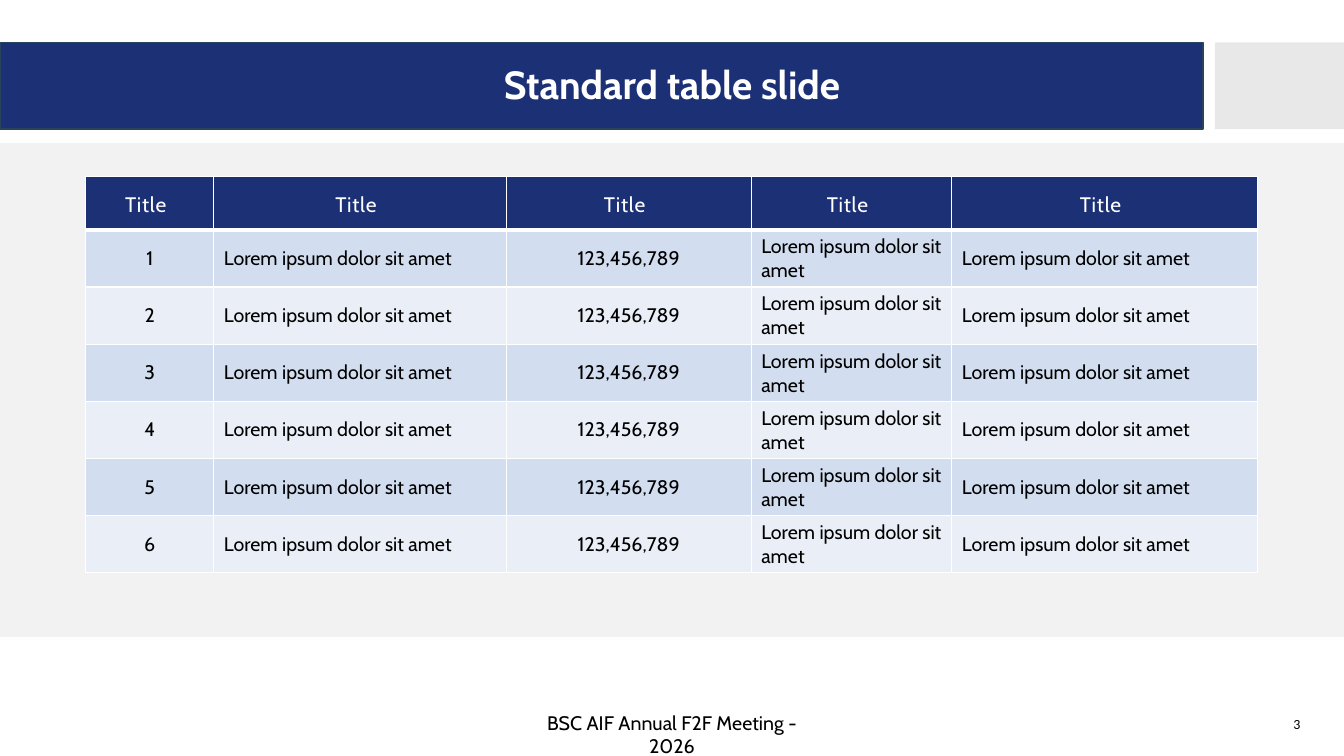
from lxml.etree import SubElement
from pptx import Presentation
from pptx.dml.color import RGBColor
from pptx.enum.shapes import MSO_SHAPE
from pptx.enum.text import MSO_ANCHOR, PP_ALIGN
from pptx.oxml.ns import qn
from pptx.util import Inches, Pt

NAVY = RGBColor(0x1C, 0x30, 0x76)
NAVY_EDGE = RGBColor(0x28, 0x44, 0x5D)
GREY = RGBColor(0xE8, 0xE8, 0xE8)
PANEL = RGBColor(0xF2, 0xF2, 0xF2)
BAND_DARK = RGBColor(0xD2, 0xDE, 0xEF)
BAND_LIGHT = RGBColor(0xEA, 0xEF, 0xF7)
WHITE = RGBColor(0xFF, 0xFF, 0xFF)
BLACK = RGBColor(0, 0, 0)

LEFT, CENTER = PP_ALIGN.LEFT, PP_ALIGN.CENTER


class SlideBuilder:
    """Places elements by percentages of the slide's width and height."""

    title = dict(name="Cabin", size=Pt(28), bold=True, color=WHITE)
    header = dict(name="Cabin", size=Pt(15), bold=False, color=WHITE)
    body = dict(name="Cabin", size=Pt(14), bold=False, color=BLACK)
    number = dict(name="Calibri", size=Pt(10), bold=False, color=BLACK)
    header_margins = dict(margin_left=Inches(0.11), margin_top=Inches(0.12),
                          margin_right=Inches(0.19), margin_bottom=Inches(0.12))

    def __init__(self, prs):
        self.prs = prs
        self.s = prs.slides.add_slide(prs.slide_layouts[6])

    def x(self, share):
        return round(self.prs.slide_width * share / 100)

    def y(self, share):
        return round(self.prs.slide_height * share / 100)

    def box(self, left, top, width, height):
        return self.x(left), self.y(top), self.x(width), self.y(height)

    def add_run(self, tf, text, style, align):
        p = tf.paragraphs[0]
        p.alignment = align
        r = p.add_run()
        r.text = text
        for key, value in style.items():
            if key == "color":
                r.font.color.rgb = value
            else:
                setattr(r.font, key, value)
        return p, r

    def rect(self, area, fill, edge=None):
        sp = self.s.shapes.add_shape(MSO_SHAPE.RECTANGLE, *self.box(*area))
        sp.shadow.inherit = False
        sp.fill.solid()
        sp.fill.fore_color.rgb = fill
        if edge is None:
            sp.line.fill.background()
        else:
            sp.line.color.rgb = edge
            sp.line.width = Pt(1)

    def text(self, area, text, style, align=LEFT, spacing=None):
        tf = self.s.shapes.add_textbox(*self.box(*area)).text_frame
        tf.word_wrap = True
        p, _ = self.add_run(tf, text, style, align)
        p.line_spacing = spacing

    def borders(self, cell, **widths):
        tc_pr = cell._tc.get_or_add_tcPr()
        for i, side in enumerate("LRTB"):
            ln = SubElement(tc_pr, qn(f"a:ln{side}"), w=str(Pt(widths.get(side, 1))))
            SubElement(SubElement(ln, qn("a:solidFill")), qn("a:srgbClr"), val=str(WHITE))
            tc_pr.insert(i, ln)

    def cell(self, cell, text, style, align, fill, anchor):
        cell.fill.solid()
        cell.fill.fore_color.rgb = fill
        cell.vertical_anchor = anchor
        return self.add_run(cell.text_frame, text, style, align)[1]

    def table(self, left, top, columns, row_height, header, rows, aligns):
        area = left, top, sum(columns), row_height * (len(rows) + 1)
        table = self.s.shapes.add_table(len(rows) + 1, len(columns), *self.box(*area)).table
        table.horz_banding = False
        for column, width in zip(table.columns, columns):
            column.width = self.x(width)
        # Header row
        for c, text in enumerate(header):
            cell = table.cell(0, c)
            r = self.cell(cell, text, self.header, CENTER, NAVY, MSO_ANCHOR.BOTTOM)
            r._r.get_or_add_rPr().set("spc", "60")
            for key, value in self.header_margins.items():
                setattr(cell, key, value)
            self.borders(cell, B=3)
        # Banded body rows
        for n, row in enumerate(rows, 1):
            fill = BAND_DARK if n % 2 else BAND_LIGHT
            for c, (text, align) in enumerate(zip(row, aligns)):
                cell = table.cell(n, c)
                self.cell(cell, text, self.body, align, fill, MSO_ANCHOR.MIDDLE)
                self.borders(cell, T=3 if n == 1 else 1)


def main():
    prs = Presentation()
    prs.slide_width, prs.slide_height = Inches(13.33), Inches(7.5)
    b = SlideBuilder(prs)

    # Title band and content panel
    b.rect((0, 5.6, 89.5, 11.47), NAVY, NAVY_EDGE)
    b.rect((90.4, 5.6, 9.6, 11.47), GREY)
    b.rect((0, 18.93, 100, 65.33), PANEL)
    b.text((11.7, 8, 76.59, 11.73), "Standard table slide", b.title, CENTER, 0.9)

    # Table
    lorem = "Lorem ipsum dolor sit amet"
    rows = [(str(n), lorem, "123,456,789", lorem, lorem) for n in range(1, 7)]
    b.table(6.38, 23.33, (9.53, 21.76, 18.23, 14.93, 22.73), 7.07,
            ["Title"] * 5, rows, (CENTER, LEFT, CENTER, LEFT, LEFT))

    # Footer
    b.text((38.18, 93.33, 23.63, 4.53), "BSC AIF Annual F2F Meeting - 2026", b.body, CENTER)
    b.text((95.5, 94, 2.25, 3.33), "3", b.number)

    prs.save("out.pptx")


if __name__ == "__main__":
    main()
